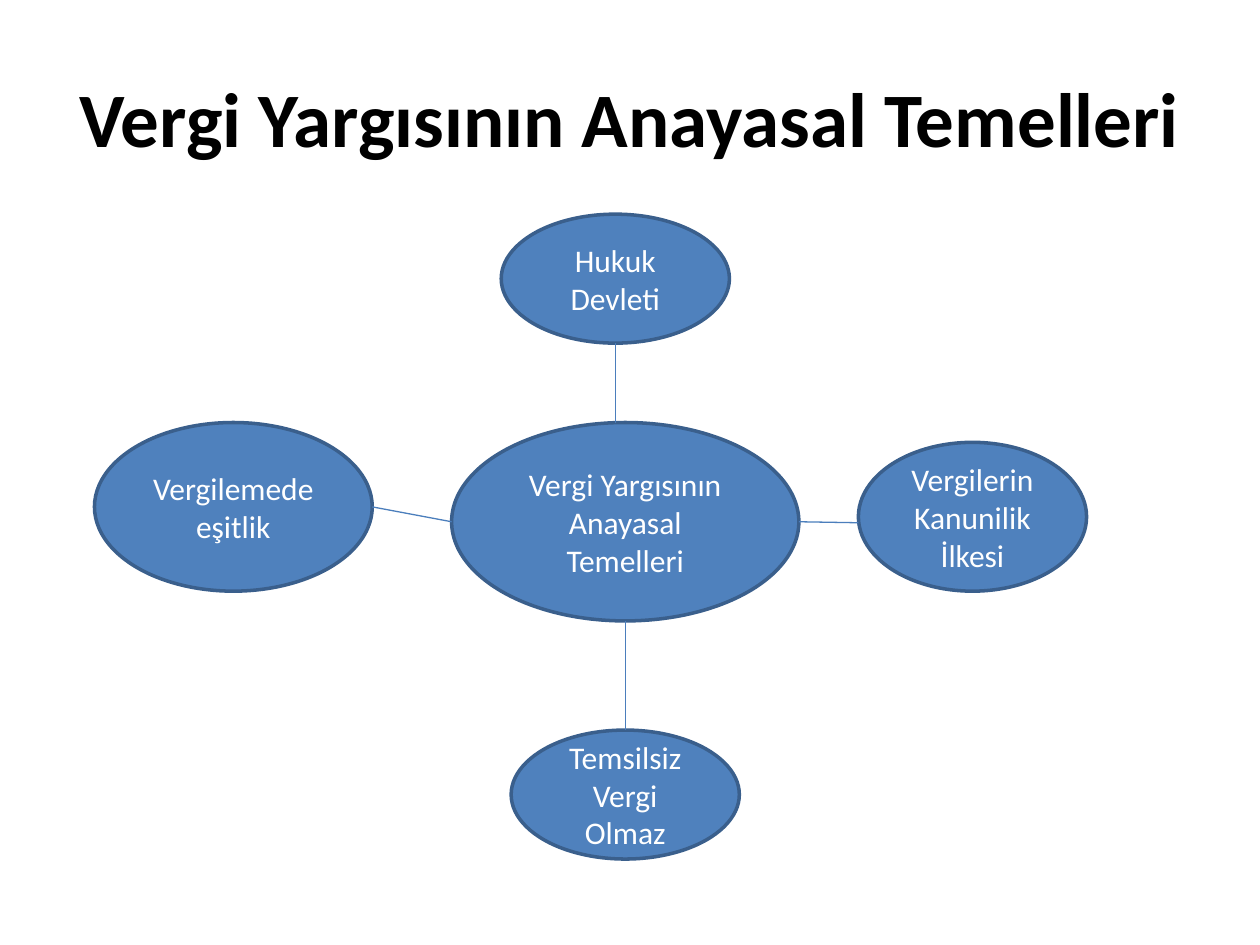
from lxml import etree
from pptx import Presentation
from pptx.dml.color import RGBColor
from pptx.enum.shapes import MSO_CONNECTOR, MSO_SHAPE
from pptx.enum.text import MSO_ANCHOR, PP_ALIGN
from pptx.oxml.ns import qn
from pptx.util import Inches, Mm, Pt

ELLIPSE = MSO_SHAPE.OVAL
STRAIGHT = MSO_CONNECTOR.STRAIGHT
CENTER = PP_ALIGN.CENTER
MIDDLE = MSO_ANCHOR.MIDDLE


def color(hex_string):
    return RGBColor.from_string(hex_string)


class DiagramSlide:
    """Style, current slide and the 2 mm grid of the diagram."""

    font = "Calibri"
    fill, outline, link = "4F81BD", "3A5F8C", "4B7EBC"
    left, top, cell = Inches(0.75), Inches(1.7), Mm(2)

    def __init__(self, slide):
        self.slide = slide

    def point(self, column, row):
        return (round(self.left + column * self.cell),
                round(self.top + row * self.cell))

    def set_text(self, shape, text, size, hex_string, bold=False):
        frame = shape.text_frame
        frame.text = text
        frame.word_wrap = True
        frame.vertical_anchor = MIDDLE
        paragraph = frame.paragraphs[0]
        paragraph.alignment = CENTER
        font = paragraph.runs[0].font
        font.name, font.size, font.bold = self.font, Pt(size), bold
        font.color.rgb = color(hex_string)

    def title(self, text):
        box = self.slide.shapes.add_textbox(
            Inches(0.5), Inches(0.3), Inches(9), Inches(1.25))
        self.set_text(box, text, 44, "000000", bold=True)

    def ellipse(self, text, column, row, columns, rows):
        shape = self.slide.shapes.add_shape(
            ELLIPSE, *self.point(column, row),
            columns * self.cell, rows * self.cell)
        shape.shadow.inherit = False
        shape.fill.solid()
        shape.fill.fore_color.rgb = color(self.fill)
        shape.line.color.rgb = color(self.outline)
        shape.line.width = Pt(2)
        self.set_text(shape, text, 18, "FFFFFF")

    def connector(self, start, end):
        line = self.slide.shapes.add_connector(
            STRAIGHT, *self.point(*start), *self.point(*end))
        line.line.color.rgb = color(self.link)
        line.line.width = Pt(0.75)
        etree.SubElement(line._element.spPr, qn("a:effectLst"))


def main():
    presentation = Presentation()
    presentation.slide_width = Inches(10)
    presentation.slide_height = Inches(7.5)
    blank = presentation.slide_layouts[6]
    diagram = DiagramSlide(presentation.slides.add_slide(blank))

    heading = "Vergi Yargısının Anayasal Temelleri"
    diagram.title(heading)

    # Principles around the central topic: column, row, columns, rows
    for text, *cells in (
        ("Hukuk Devleti", 41, 0, 23, 13),
        (heading, 36, 21, 35, 20),
        ("Temsilsiz Vergi Olmaz", 42, 52, 23, 13),
        ("Vergilerin Kanunilik İlkesi", 77, 23, 23, 15),
        ("Vergilemede eşitlik", 0, 21, 28, 17),
    ):
        diagram.ellipse(text, *cells)

    # Links between the centre and each principle
    for start, end in (
        ((52.5, 13), (52.5, 21)),
        ((71, 31), (77, 31.1)),
        ((53.5, 41), (53.5, 52)),
        ((28, 29.5), (36, 31)),
    ):
        diagram.connector(start, end)

    presentation.save("out.pptx")


if __name__ == "__main__":
    main()
